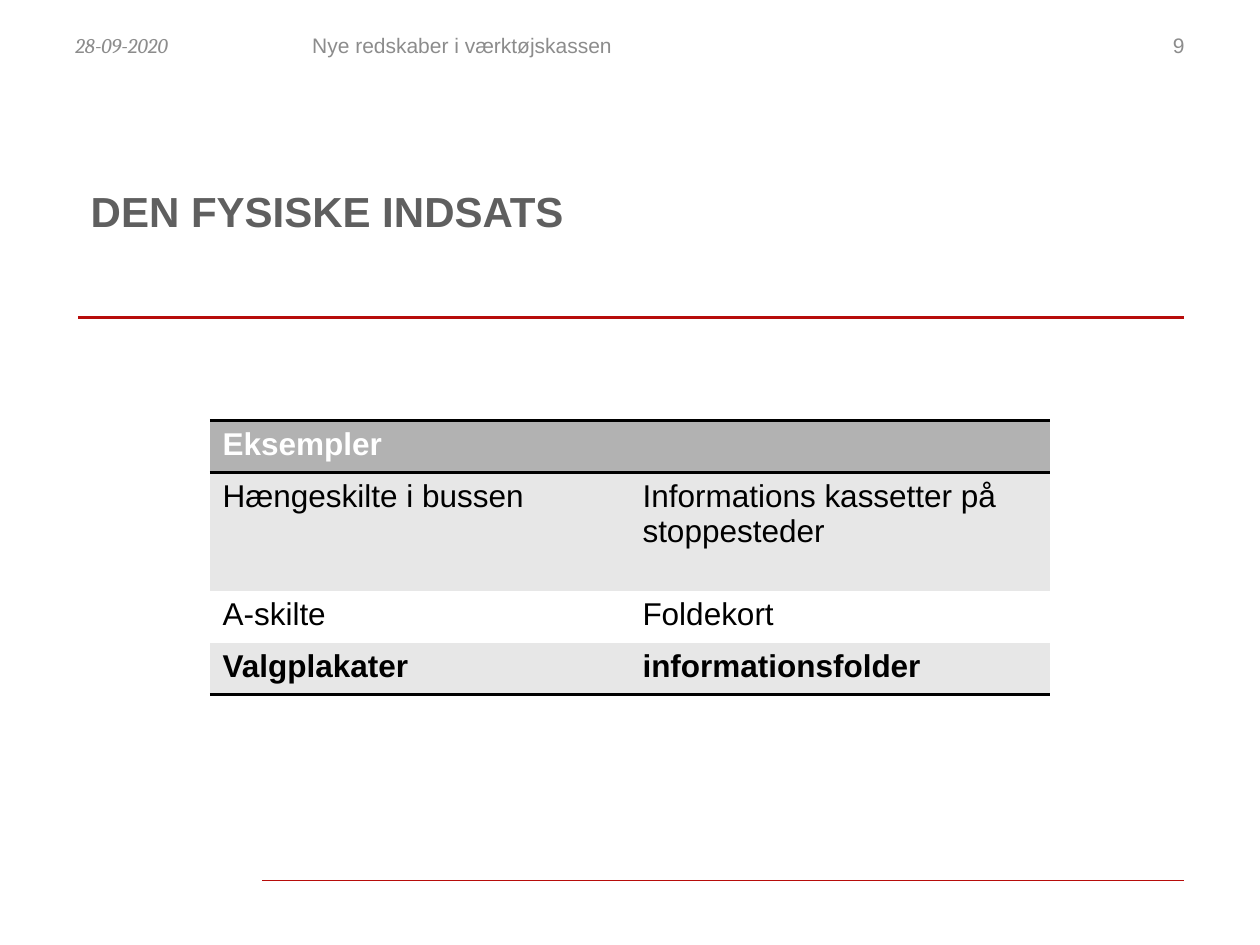
from pptx import Presentation
from pptx.dml.color import RGBColor
from pptx.enum.shapes import MSO_CONNECTOR
from pptx.enum.text import MSO_ANCHOR, PP_ALIGN
from pptx.oxml.ns import qn
from pptx.util import Inches, Pt
from lxml.etree import SubElement

WIDE, HIGH = 10, 7.5
ROWS = [
    ("Eksempler", ""),
    ("Hængeskilte i bussen", "Informations kassetter på stoppesteder"),
    ("A-skilte", "Foldekort"),
    ("Valgplakater", "informationsfolder"),
]
FILLS = ["B2B2B2", "E7E7E7", "FFFFFF", "E7E7E7"]
TALL = [0.41, 0.94, 0.41, 0.41]


def color(code):
    """Turn a hex string into a colour."""
    return RGBColor.from_string(code)


def write(frame, text, size=12, font="Arial", tint="8C8C8C", bold=False,
          italic=False, align=PP_ALIGN.LEFT):
    """Put formatted text at the top of a frame."""
    frame.word_wrap = True
    frame.vertical_anchor = MSO_ANCHOR.TOP
    para = frame.paragraphs[0]
    para.alignment = align
    run = para.add_run()
    run.text = text
    face = run.font
    face.name, face.size, face.bold, face.italic = font, Pt(size), bold, italic
    face.color.rgb = color(tint)


def place(shape, left, top, width, height):
    """Move and size a shape in inches."""
    shape.left, shape.top = Inches(left), Inches(top)
    shape.width, shape.height = Inches(width), Inches(height)


def label(slide, text, left, width, **form):
    """Add one text of the header band."""
    box = slide.shapes.add_textbox(
        Inches(left), Inches(0.21), Inches(width), Inches(0.4))
    write(box.text_frame, text, **form)


def rule(slide, left, top, weight):
    """Draw a red rule to the right margin."""
    line = slide.shapes.add_connector(
        MSO_CONNECTOR.STRAIGHT, Inches(left), Inches(top),
        Inches(0.94 * WIDE), Inches(top))
    line.line.color.rgb = color("B70C0A")
    line.line.width = Pt(weight)
    SubElement(line._element.spPr, qn("a:effectLst"))


def border(cell, sides):
    """Draw black borders on the given sides and clear the rest."""
    props = cell._tc.get_or_add_tcPr()
    for side in "LRTB":
        edge = SubElement(props, qn("a:ln" + side))
        if side in sides:
            edge.set("w", str(Pt(2)))
            fill = SubElement(edge, qn("a:solidFill"))
            SubElement(fill, qn("a:srgbClr"), val="000000")
        else:
            SubElement(edge, qn("a:noFill"))


def grid(slide):
    """Build the table of examples."""
    last = len(ROWS) - 1
    edges = {0: "TB", 1: "T", last: "B"}
    table = slide.shapes.add_table(
        len(ROWS), 2, Inches(WIDE / 6), Inches(3.34),
        Inches(WIDE * 2 / 3), Inches(sum(TALL))).table
    for r, texts in enumerate(ROWS):
        table.rows[r].height = Inches(TALL[r])
        for c, text in enumerate(texts):
            cell = table.cell(r, c)
            border(cell, edges.get(r, ""))
            cell.fill.solid()
            cell.fill.fore_color.rgb = color(FILLS[r])
            if text:
                write(cell.text_frame, text, size=18, bold=r in (0, last),
                      tint="000000" if r else "FFFFFF")


def main():
    """Build and save the slide."""
    deck = Presentation()
    deck.slide_width, deck.slide_height = Inches(WIDE), Inches(HIGH)
    slide = deck.slides.add_slide(deck.slide_layouts[5])
    rule(slide, 0.62, 2.52, 1.5)
    rule(slide, 2.08, 6.99, 0.5)
    title = slide.shapes.title
    place(title, 0.62, 1.42, 8.78, 1.1)
    write(title.text_frame, "DEN FYSISKE INDSATS", size=24, tint="5F5F5F",
          bold=True)
    label(slide, "28-09-2020", 0.5, 2.33, font="Cambria", italic=True)
    label(slide, "Nye redskaber i værktøjskassen", 2.38, 3.17)
    label(slide, "9", 7.17, 2.33, align=PP_ALIGN.RIGHT)
    grid(slide)
    deck.save("out.pptx")


if __name__ == "__main__":
    main()
